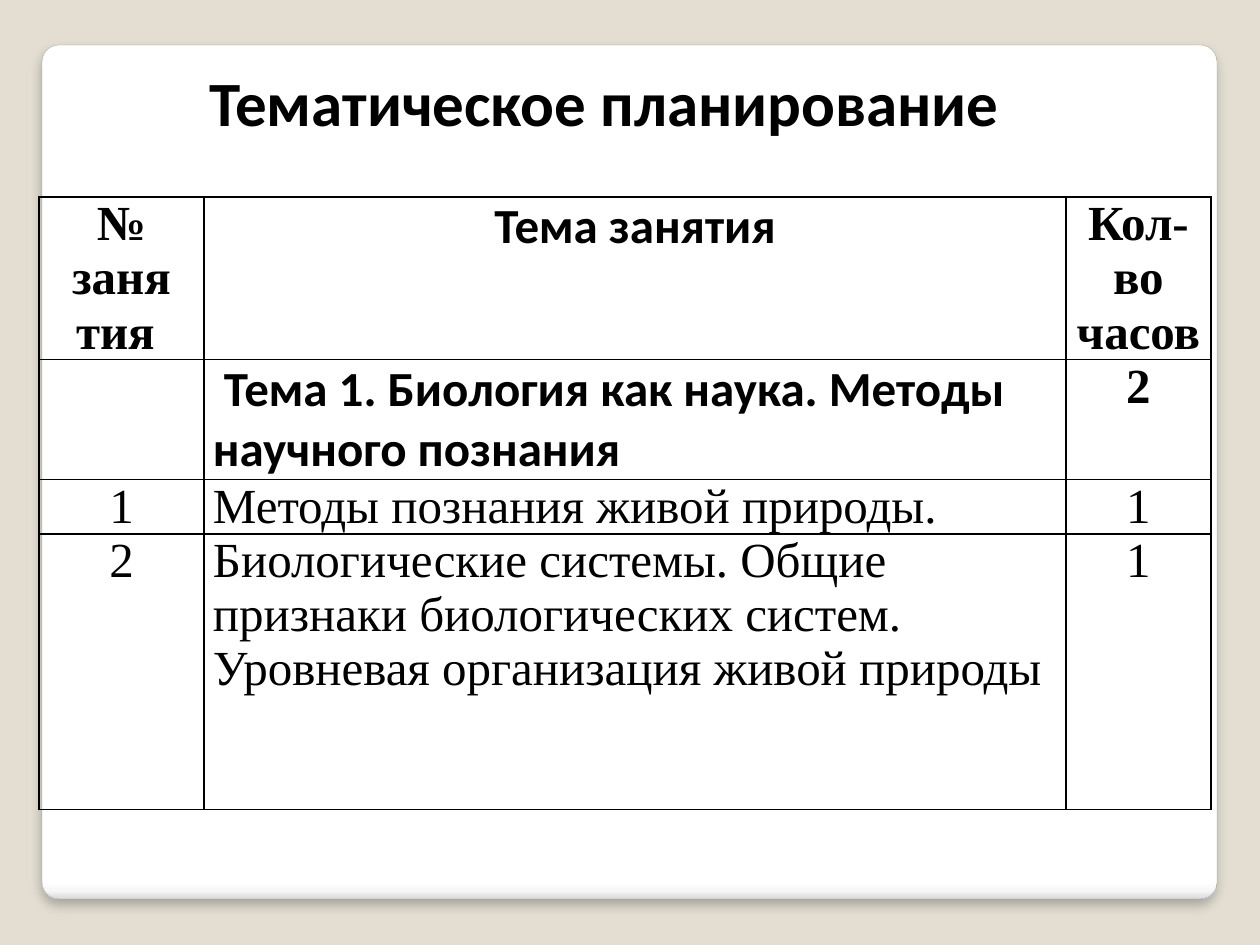
from lxml import etree
from pptx import Presentation
from pptx.dml.color import RGBColor as Rgb
from pptx.enum.shapes import MSO_SHAPE as Shape
from pptx.enum.text import MSO_ANCHOR as Anchor, PP_ALIGN as Align
from pptx.oxml import parse_xml
from pptx.oxml.ns import qn
from pptx.util import Pt

SCALE = 914400 / 126
NS = 'xmlns:a="http://schemas.openxmlformats.org/drawingml/2006/main"'
HEX = {"back": "E3DED1", "edge": "A4A4A4", "ink": "000000",
       "card": "FFFFFF", "pale": "F7F7F7", "rim": "DADADA"}
STOPS = [(0, "card"), (98, "card"), (99, "pale"), (100, "rim")]
SANS, SERIF = "Calibri", "Times New Roman"

COLS = [165, 862, 145]
ROWS = [146, 106, 53, 276]
# Each cell: text, font, bold
CELLS = [
    [("№ заня\nтия ", SERIF, True), ("Тема занятия", SANS, True),
     ("Кол-во часов", SERIF, True)],
    [("", SERIF, False),
     (" Тема 1. Биология как наука. Методы научного познания", SANS, True),
     ("2", SERIF, True)],
    [("1", SERIF, False), ("Методы познания живой природы.", SERIF, False),
     ("1", SERIF, False)],
    [("2", SERIF, False),
     ("Биологические системы. Общие признаки биологических систем. "
      "Уровневая организация живой природы", SERIF, False),
     ("1", SERIF, False)],
]


def px(*nums):
    return [round(n * SCALE) for n in nums]


class Deck:
    """Holds the style and the current slide."""

    def __init__(self):
        self.prs = Presentation()
        self.prs.slide_width, self.prs.slide_height = px(1260, 945)
        self.slide = self.prs.slides.add_slide(self.prs.slide_layouts[6])
        fill = self.slide.background.fill
        fill.solid()
        fill.fore_color.rgb = Rgb.from_string(HEX["back"])

    def label(self, frame, text, size, face, bold, align):
        frame.word_wrap = True
        frame.text = text
        for para in frame.paragraphs:
            para.alignment = align
            font = para.font
            font.size, font.name, font.bold = Pt(size), face, bold
            font.color.rgb = Rgb.from_string(HEX["ink"])

    def panel(self, *box):
        """Rounded card with a shaded lower edge and a soft shadow."""
        card = self.slide.shapes.add_shape(Shape.ROUNDED_RECTANGLE, *px(*box))
        card.adjustments[0] = 0.02
        card.line.color.rgb = Rgb.from_string(HEX["edge"])
        card.line.width = Pt(0.16)
        card.fill.gradient()
        card.shadow.inherit = False
        props = card.element.spPr
        stops = "".join(
            f'<a:gs pos="{pos * 1000}"><a:srgbClr val="{HEX[tone]}"/></a:gs>'
            for pos, tone in STOPS)
        grad = parse_xml(f'<a:gradFill {NS}><a:gsLst>{stops}</a:gsLst>'
                         '<a:lin ang="5400000" scaled="0"/></a:gradFill>')
        props.replace(props.find(qn("a:gradFill")), grad)
        props.find(qn("a:effectLst")).append(parse_xml(
            f'<a:outerShdw {NS} blurRad="{Pt(6)}" dist="{Pt(4)}" '
            f'dir="5400000" rotWithShape="0"><a:srgbClr val="{HEX["ink"]}">'
            '<a:alpha val="25000"/></a:srgbClr></a:outerShdw>'))

    def title(self, text, *box):
        frame = self.slide.shapes.add_textbox(*px(*box)).text_frame
        frame.vertical_anchor = Anchor.MIDDLE
        frame.margin_bottom = 0
        self.label(frame, text, 36, SANS, True, Align.CENTER)

    def border(self, cell):
        """Draw the four borders of a cell."""
        props = cell._tc.get_or_add_tcPr()
        for spot, side in enumerate("LRTB"):
            props.insert(spot, etree.fromstring(
                f'<a:ln{side} {NS} w="{Pt(1)}"><a:solidFill>'
                f'<a:srgbClr val="{HEX["ink"]}"/></a:solidFill></a:ln{side}>'))

    def table(self, left, top):
        grid = self.slide.shapes.add_table(
            len(ROWS), len(COLS), *px(left, top, sum(COLS), sum(ROWS))).table
        grid.first_row = grid.horz_banding = False
        for col, wide in zip(grid.columns, px(*COLS)):
            col.width = wide
        for y, (row, high) in enumerate(zip(grid.rows, px(*ROWS))):
            row.height = high
            for x, cell in enumerate(row.cells):
                text, face, bold = CELLS[y][x]
                cell.margin_left, cell.margin_right = px(9, 9)
                cell.margin_top = cell.margin_bottom = 0
                cell.fill.background()
                self.border(cell)
                align = Align.LEFT if x == 1 and y > 0 else Align.CENTER
                if text:
                    self.label(cell.text_frame, text, 28, face, bold, align)


def main():
    deck = Deck()
    deck.panel(42, 45, 1175, 854)
    deck.table(39, 197)
    deck.title("Тематическое планирование", 88, 57, 1033, 83)
    deck.prs.save("out.pptx")


if __name__ == "__main__":
    main()
